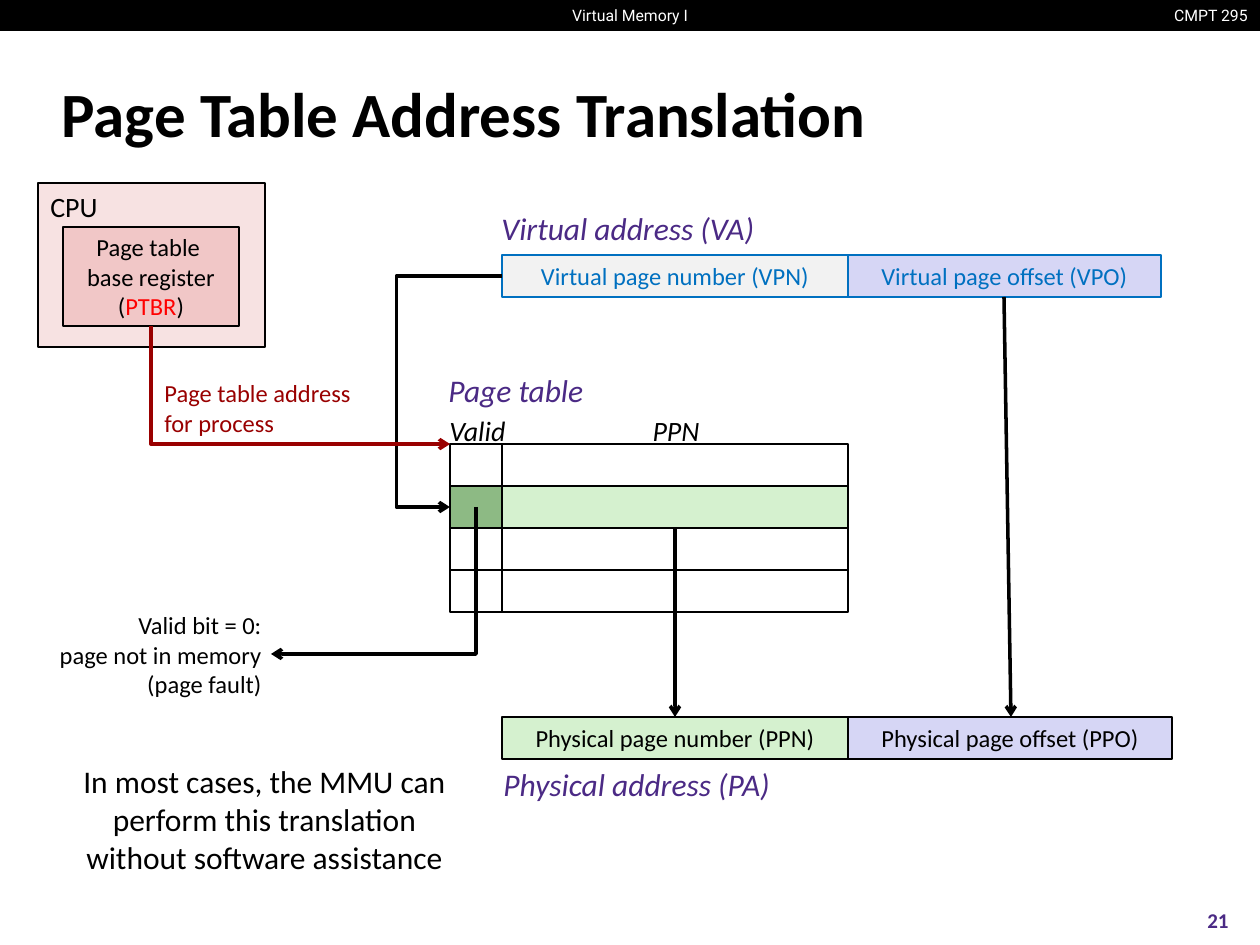
"""Build the slide on page table address translation."""
from dataclasses import dataclass

from lxml.etree import SubElement
from pptx import Presentation
from pptx.dml.color import RGBColor as Rgb
from pptx.enum.shapes import MSO_CONNECTOR as Connector, MSO_SHAPE as Shape
from pptx.enum.text import MSO_ANCHOR as Anchor, MSO_AUTO_SIZE as AutoSize, PP_ALIGN as Align
from pptx.oxml.ns import qn
from pptx.util import Emu, Pt


@dataclass(frozen=True)
class Theme:
    black: str = "000000"
    white: str = "FFFFFF"
    purple: str = "4B2A85"
    blue: str = "0070C0"
    crimson: str = "990000"
    red: str = "FF0000"
    rose: str = "F1C7C7"
    grey: str = "F2F2F2"
    lavender: str = "D6D6F5"
    mint: str = "D5F1CF"
    leaf: str = "8DBA84"
    body_font: str = "Calibri"
    header_font: str = "Roboto"
    title: int = 36
    heading: int = 18
    column: int = 16
    label: int = 14
    page: int = 12
    header: int = 9


theme = Theme()
SCALE = 914400 / 126


def px(*lengths):
    return [Emu(round(length * SCALE)) for length in lengths]


def write(holder, text, size, color=theme.black, align=Align.LEFT, anchor=Anchor.TOP,
          font=theme.body_font, bold=False, italic=False, wrap=False):
    frame = holder.text_frame
    frame.text = text
    frame.word_wrap = wrap
    frame.auto_size = AutoSize.NONE
    frame.vertical_anchor = anchor
    for paragraph in frame.paragraphs:
        paragraph.alignment = align
        for run in paragraph.runs:
            run.font.name = font
            run.font.size = Pt(size)
            run.font.bold = bold
            run.font.italic = italic
            run.font.color.rgb = Rgb.from_string(color)


deck = Presentation()
deck.slide_width, deck.slide_height = px(1260, 945)
slide = deck.slides.add_slide(deck.slide_layouts[5])
shapes = slide.shapes

title = shapes.title
title.left, title.top, title.width, title.height = px(49, 60, 1158, 105)
write(title, "Page Table Address Translation", theme.title, anchor=Anchor.MIDDLE, bold=True, wrap=True)

valid_left, number_left, offset_left = 450, 502, 848
valid_width, number_width = number_left - valid_left, offset_left - number_left
row_height, table_top, virtual_top, physical_top = 42, 444, 255, 717

boxes = [
    (0, 0, 1260, 31, theme.black, None, "", theme.black),
    (38, 183, 227, 164, theme.rose, theme.black, "CPU", theme.black),
    (63, 227, 176, 99, theme.rose, theme.black, "Page table \vbase register\n(PTBR)", theme.black),
    (number_left, virtual_top, number_width, row_height, theme.grey, theme.blue,
     "Virtual page number (VPN)", theme.blue),
    (offset_left, virtual_top, 313, row_height, theme.lavender, theme.blue,
     "Virtual page offset (VPO)", theme.blue),
    (number_left, physical_top, number_width, row_height, theme.mint, theme.black,
     "Physical page number (PPN)", theme.black),
    (offset_left, physical_top, 324, row_height, theme.lavender, theme.black,
     "Physical page offset (PPO)", theme.black),
]
for row in range(4):
    row_top = table_top + row * row_height
    valid_fill, number_fill = (theme.leaf, theme.mint) if row == 1 else (None, None)
    boxes += [
        (number_left, row_top, number_width, row_height, number_fill, theme.black, "", theme.black),
        (valid_left, row_top, valid_width, row_height, valid_fill, theme.black, "", theme.black),
    ]

for left, top, width, height, fill, outline, text, color in boxes:
    box = shapes.add_shape(Shape.RECTANGLE, *px(left, top, width, height))
    box.shadow.inherit = False
    if fill:
        box.fill.solid()
        box.fill.fore_color.rgb = Rgb.from_string(fill)
    else:
        box.fill.background()
    if outline:
        box.line.color.rgb = Rgb.from_string(outline)
        box.line.width = Pt(1)
    else:
        box.line.fill.background()
    if text == "CPU":
        write(box, text, theme.column, wrap=True)
        tint = box.fill._xPr.find(qn("a:solidFill"))[0]
        SubElement(tint, qn("a:alpha"), val="51000")
    elif text:
        write(box, text, theme.label, color, Align.CENTER, Anchor.MIDDLE, wrap=True)
    if "PTBR" in text:
        register_name = box.text_frame.paragraphs[1]
        register_name.runs[0].text = "("
        for part, part_color in (("PTBR", theme.red), (")", theme.black)):
            run = register_name.add_run()
            run.text = part
            run.font.name = theme.body_font
            run.font.size = Pt(theme.label)
            run.font.color.rgb = Rgb.from_string(part_color)

for left, top, width, text, align in (
    (1158, 0, 102, "CMPT 295", Align.RIGHT),
    (557, 0, 146, "Virtual Memory I", Align.CENTER),
):
    header = shapes.add_textbox(*px(left, top, width, 31))
    write(header, text, theme.header, theme.white, align, font=theme.header_font)

for left, top, width, text in (
    (489, 203, 281, "Virtual address (VA)"),
    (491, 759, 295, "Physical address (PA)"),
    (436, 365, 179, "Page table"),
):
    heading = shapes.add_textbox(*px(left, top, width, 50))
    write(heading, text, theme.heading, theme.purple, italic=True)

for left, width, text, align in ((437, 82, "Valid", Align.LEFT), (503, 346, "PPN", Align.CENTER)):
    column = shapes.add_textbox(*px(left, 407, width, 47))
    write(column, text, theme.column, align=align, italic=True)

for left, top, width, height, text, color, align in (
    (152, 372, 219, 72, "Page table address\nfor process", theme.crimson, Align.LEFT),
    (45, 604, 229, 102, "Valid bit = 0:\npage not in memory\n(page fault)", theme.black, Align.RIGHT),
):
    label = shapes.add_textbox(*px(left, top, width, height))
    write(label, text, theme.label, color, align)

remark = shapes.add_textbox(*px(63, 756, 403, 127))
write(remark, "In most cases, the MMU can perform this translation without software assistance",
      theme.heading, align=Align.CENTER, wrap=True)
page_number = shapes.add_textbox(*px(1176, 895, 84, 50))
write(page_number, "21", theme.page, theme.purple, Align.CENTER, Anchor.MIDDLE, bold=True)

for route, start_x, start_y, end_x, end_y, color in (
    ("loop", number_left, 276, valid_left, 507, theme.black),
    ("straight", 1004, 297, 1011, physical_top, theme.black),
    ("straight", 675, 528, 675, physical_top, theme.black),
    ("corner", 476, 507, 271, 654, theme.black),
    ("corner", 151, 326, valid_left, table_top, theme.crimson),
):
    ends = start_x, start_y, end_x, end_y
    if route == "corner":
        mid_x, mid_y = (start_x + end_x) / 2, (start_y + end_y) / 2
        half_run, half_drop = (start_x - end_x) / 2, (end_y - start_y) / 2
        side = half_drop if half_run > 0 else -half_drop
        ends = mid_x - side, mid_y - abs(half_run), mid_x + side, mid_y + abs(half_run)
    kind = Connector.STRAIGHT if route == "straight" else Connector.ELBOW
    arrow = shapes.add_connector(kind, *px(*ends))
    arrow.line.color.rgb = Rgb.from_string(color)
    arrow.line.width = Pt(2)
    properties = arrow._element.spPr
    SubElement(properties.find(qn("a:ln")), qn("a:tailEnd"), type="arrow")
    SubElement(properties, qn("a:effectLst"))
    geometry = properties.find(qn("a:prstGeom"))
    if route == "loop":
        SubElement(geometry.find(qn("a:avLst")), qn("a:gd"), name="adj1", fmla="val 203000")
    elif route == "corner":
        geometry.set("prst", "bentConnector2")
        properties.find(qn("a:xfrm")).set("rot", str((90 if end_x < start_x else 270) * 60000))

deck.save("out.pptx")
